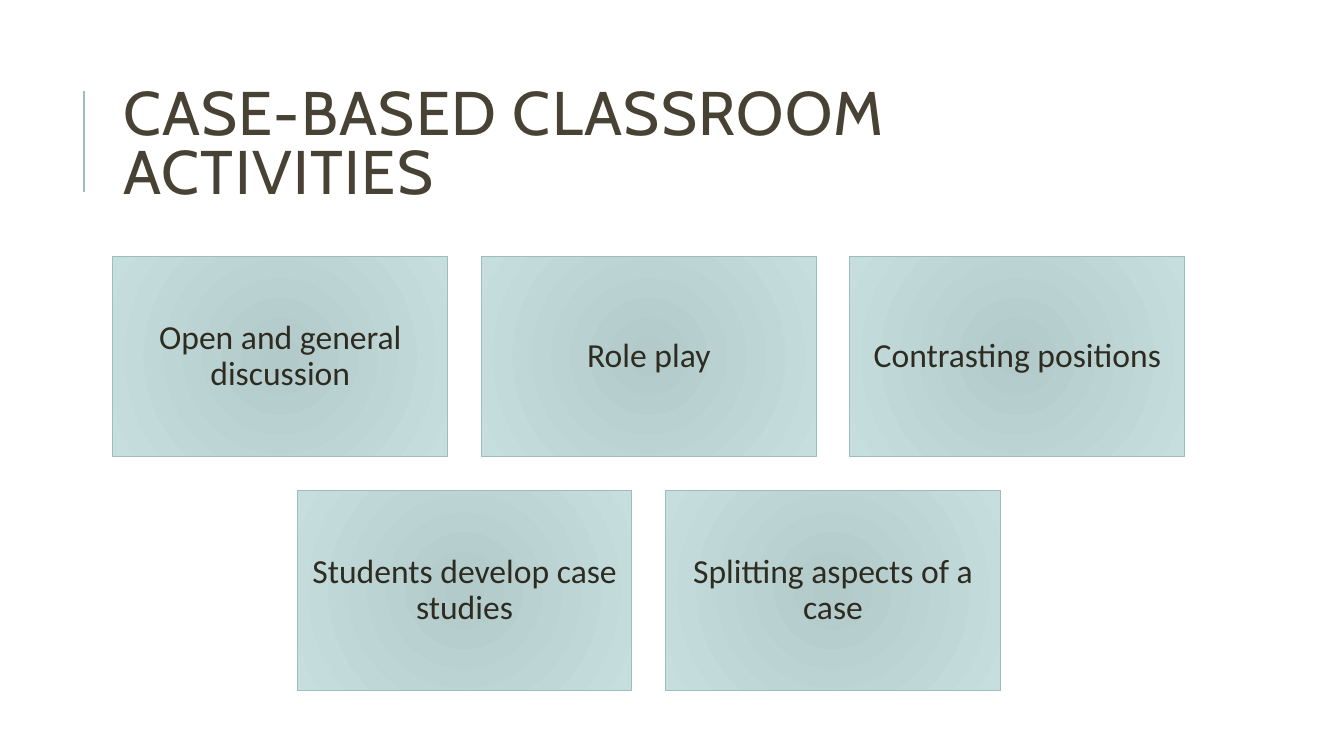
import pptx
import pptx.util
from lxml import etree
from pptx.dml.color import RGBColor
from pptx.enum.shapes import MSO_CONNECTOR, MSO_SHAPE
from pptx.enum.text import MSO_ANCHOR, MSO_AUTO_SIZE, PP_ALIGN
from pptx.oxml import parse_xml
from pptx.oxml.ns import nsdecls, qn
from pptx.util import Inches, Pt


class Theme:
    title_font, body_font = "Cabin", "Calibri"
    title_size, body_size = Pt(44), Pt(24)
    title_color = RGBColor.from_string("474233")
    body_color = RGBColor.from_string("2E2B21")
    accent = RGBColor.from_string("9CBEBD")
    card_center = RGBColor.from_string("B2CBCA")
    card_edge = RGBColor.from_string("C6DEDE")


def fill_radial(fill, colors):
    """Fill with a circular gradient, from the first colour to the second."""
    fill.gradient()
    for stop, color in zip(fill.gradient_stops, colors):
        stop.color.rgb = color
    lin = fill._xPr.find(qn("a:gradFill")).find(qn("a:lin"))
    lin.getparent().replace(lin, parse_xml(
        f'<a:path {nsdecls("a")} path="circle">'
        '<a:fillToRect l="100000" t="100000" r="100000" b="100000"/></a:path>'))


prs = pptx.Presentation()
prs.slide_width, prs.slide_height = Inches(13.33), Inches(7.5)
s = prs.slides.add_slide(prs.slide_layouts[5])

# Title
title = s.shapes.title
title.left, title.top = Inches(1.12), Inches(0.64)
title.width, title.height = Inches(10.63), Inches(1.64)
tf = title.text_frame
tf.word_wrap, tf.auto_size = True, MSO_AUTO_SIZE.NONE
tf.vertical_anchor = MSO_ANCHOR.MIDDLE
p = tf.paragraphs[0]
p.text = "CASE-BASED CLASSROOM ACTIVITIES"
p.alignment, p.line_spacing = PP_ALIGN.LEFT, 0.8
p.font.name, p.font.size = Theme.title_font, Theme.title_size
p.font.color.rgb = Theme.title_color
p.runs[0].font._element.set("spc", "100")

# Rule beside the title
rule = s.shapes.add_connector(MSO_CONNECTOR.STRAIGHT, Inches(0.83), Inches(1.9),
                              Inches(0.83), Inches(0.9))
rule.line.color.rgb, rule.line.width = Theme.accent, Pt(1.5)
etree.SubElement(rule._element.spPr, qn("a:effectLst"))

# Activity cards, each row centred under the title
rows = [
    ["Open and general discussion", "Role play", "Contrasting positions"],
    ["Students develop case studies", "Splitting aspects of a case"],
]
card_w, card_h, gap = 3.32, 1.99, 0.335
center_x, first_top = 6.435, 2.54

for i, row in enumerate(rows):
    left = center_x - (len(row) * (card_w + gap) - gap) / 2
    top = first_top + i * (card_h + gap)
    for j, text in enumerate(row):
        card = s.shapes.add_shape(
            MSO_SHAPE.RECTANGLE, Inches(left + j * (card_w + gap)), Inches(top),
            Inches(card_w), Inches(card_h))
        card.shadow.inherit = False
        fill_radial(card.fill, [Theme.card_center, Theme.card_edge])
        card.line.color.rgb, card.line.width = Theme.accent, Pt(0.75)
        tf = card.text_frame
        tf.word_wrap, tf.vertical_anchor = True, MSO_ANCHOR.MIDDLE
        tf.margin_left = tf.margin_right = Inches(0.1)
        tf.margin_top = tf.margin_bottom = Inches(0.1)
        p = tf.paragraphs[0]
        p.text = text
        p.alignment, p.line_spacing = PP_ALIGN.CENTER, 0.9
        p.font.name, p.font.size = Theme.body_font, Theme.body_size
        p.font.color.rgb = Theme.body_color

prs.save("out.pptx")
